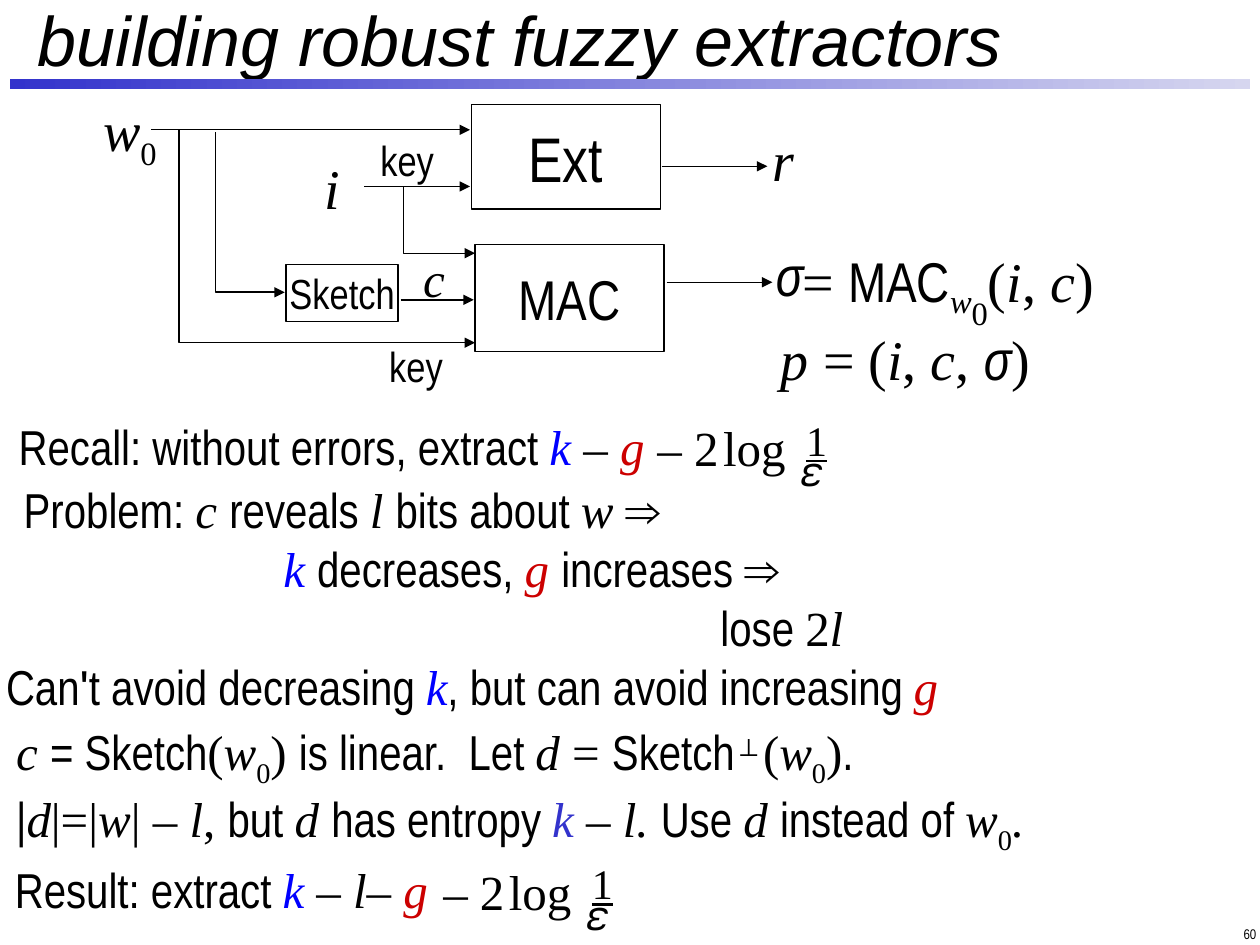
from lxml.etree import SubElement
from pptx import Presentation
from pptx.dml.color import RGBColor
from pptx.enum.shapes import MSO_CONNECTOR, MSO_SHAPE
from pptx.enum.text import MSO_ANCHOR as ANCHOR, MSO_AUTO_SIZE as AUTO, PP_ALIGN as ALIGN
from pptx.oxml.ns import qn
from pptx.util import Inches, Pt

BLACK, BLUE, RED, INDIGO = "000000", "0000FF", "CC0000", "3333CC"
NARROW, SERIF = "Arial Narrow", "Times New Roman"

# style: font, italic, colour, baseline in percent
STYLES = {
    "word": (NARROW, False, BLACK, 0),
    "greek": (NARROW, True, BLACK, 0),
    "apos": ("Arial", False, BLACK, 0),
    "math": (SERIF, False, BLACK, 0),
    "var": (SERIF, True, BLACK, 0),
    "blue": (SERIF, True, BLUE, 0),
    "indigo": (SERIF, True, INDIGO, 0),
    "red": (SERIF, True, RED, 0),
    "sub": (SERIF, False, BLACK, -25),
    "sup": (SERIF, False, BLACK, 30),
    "key": (SERIF, True, BLACK, -19),
    "keysub": (SERIF, False, BLACK, -41),
}
W0 = [("var", "w"), ("sub", "0")]


def rgb(value):
    return RGBColor.from_string(value)


def add_run(p, style, text, size):
    font, italic, colour, baseline = STYLES[style]
    r = p.add_run()
    r.text = text
    r.font.name, r.font.size, r.font.italic = font, Pt(size), italic
    r.font.color.rgb = rgb(colour)
    if baseline:
        r.font._element.set("baseline", str(baseline * 1000))
    return r


def add_text(slide, x, y, w, h, size, *lines, indents=(), spacing=None, align=ALIGN.LEFT):
    """Text box with one paragraph per line; a line is a list of (style, text)."""
    tf = slide.shapes.add_textbox(Inches(x), Inches(y), Inches(w), Inches(h)).text_frame
    tf.word_wrap = True
    for n, line in enumerate(lines):
        p = tf.paragraphs[0] if n == 0 else tf.add_paragraph()
        p.alignment = align
        if spacing:
            p.line_spacing = spacing
        if indents:
            p._p.get_or_add_pPr().set("marL", str(Inches(indents[n])))
        for style, text in line:
            add_run(p, style, text, size)
    return tf


def add_block(slide, x, y, w, h, label, size):
    sp = slide.shapes.add_shape(MSO_SHAPE.RECTANGLE, Inches(x), Inches(y), Inches(w), Inches(h))
    sp.shadow.inherit = False
    sp.fill.background()
    sp.line.color.rgb = rgb(BLACK)
    sp.line.width = Pt(0.75)
    tf = sp.text_frame
    tf.word_wrap = False
    tf.vertical_anchor = ANCHOR.MIDDLE
    tf.paragraphs[0].alignment = ALIGN.CENTER
    add_run(tf.paragraphs[0], "word", label, size)


def style_arrow(sp, width):
    sp.line.color.rgb = rgb(BLACK)
    sp.line.width = Pt(width)
    SubElement(sp.line._get_or_add_ln(), qn("a:tailEnd"), type="triangle")


def add_arrow(slide, x1, x2, y):
    line = slide.shapes.add_connector(
        MSO_CONNECTOR.STRAIGHT, Inches(x1), Inches(y), Inches(x2), Inches(y))
    style_arrow(line, 0.75)
    SubElement(line._element.spPr, qn("a:effectLst"))


def add_elbow(slide, x1, y1, x2, y2, width=0.75):
    """Arrow that runs down from (x1, y1) and then right to (x2, y2)."""
    builder = slide.shapes.build_freeform(Inches(x1), Inches(y1), scale=1.0)
    builder.add_line_segments(
        [(Inches(x1), Inches(y2)), (Inches(x2), Inches(y2))], close=False)
    sp = builder.convert_to_shape()
    sp.shadow.inherit = False
    sp.fill.background()
    style_arrow(sp, width)


def add_log_term(slide, x, y):
    """– 2 log (1/𝜀)"""
    tf = add_text(slide, x, y, 1.4, 0.5, 28,
                  [("math", "– 2"), ("math", " "), ("math", "log")], spacing=0.85)
    tf.paragraphs[0].runs[1].font.size = Pt(10)
    fraction = add_text(slide, x + 0.92, y + 0.04, 0.88, 0.59, 24,
                        [("math", "1")], [("word", "𝜀 ")], spacing=0.6, align=ALIGN.CENTER)
    fraction.paragraphs[0].runs[0].font.underline = True


def add_header(slide):
    bar = slide.shapes.add_shape(
        MSO_SHAPE.RECTANGLE, Inches(0.08), Inches(0.63), Inches(9.84), Inches(0.08))
    bar.shadow.inherit = False
    bar.line.fill.background()
    bar.fill.gradient()
    bar.fill.gradient_angle = 0
    for stop, colour, position in zip(bar.fill.gradient_stops, (INDIGO, "D6D6EF"), (0, 1)):
        stop.color.rgb = rgb(colour)
        stop.position = position
    title = slide.shapes.title
    title.left, title.top = Inches(0.2), Inches(0.07)
    title.width, title.height = Inches(8.96), Inches(0.47)
    tf = title.text_frame
    tf.text = "building robust fuzzy extractors"
    tf.auto_size = AUTO.NONE
    tf.vertical_anchor = ANCHOR.MIDDLE
    p = tf.paragraphs[0]
    p.alignment = ALIGN.LEFT
    font = p.runs[0].font
    font.name, font.size, font.italic = "Arial", Pt(40), True
    font.color.rgb = rgb(BLACK)


def add_diagram(slide):
    add_block(slide, 3.74, 0.83, 1.5, 0.83, "Ext", 36)
    add_block(slide, 3.77, 1.94, 1.5, 0.85, "MAC", 32)
    add_block(slide, 2.27, 2.1, 0.89, 0.45, "Sketch", 24)
    for x1, x2, y in ((1.2, 3.73, 1.03), (2.89, 3.73, 1.48), (5.25, 6.09, 1.32),
                      (5.29, 6.13, 2.24), (3.18, 3.76, 2.38)):
        add_arrow(slide, x1, x2, y)
    add_elbow(slide, 3.2, 1.48, 3.77, 2.01)
    add_elbow(slide, 1.42, 1.03, 3.77, 2.72)
    add_elbow(slide, 1.71, 1.05, 2.26, 2.32, 1)
    add_text(slide, 0.72, 0.71, 0.8, 0.64, 32, W0)
    for x, y, size, style, text in (
            (2.48, 1.17, 32, "var", "i"), (6.03, 0.95, 32, "var", "r"),
            (3.26, 1.92, 28, "var", "c"), (6.06, 1.86, 32, "greek", "σ"),
            (2.92, 1.02, 24, "word", "key"), (2.99, 2.65, 24, "word", "key")):
        add_text(slide, x, y, 0.75, 0.6, size, [(style, text)])
    add_text(slide, 6.27, 1.91, 2.9, 0.64, 32, [
        ("math", "= "), ("word", "MAC"), ("key", "w"), ("keysub", "0"),
        ("math", "("), ("var", "i"), ("math", ", "), ("var", "c"), ("math", ")")])
    add_text(slide, 6.1, 2.53, 2.5, 0.64, 32, [
        ("var", "p "), ("math", "= ("), ("var", "i"), ("math", ", "), ("var", "c"),
        ("math", ", "), ("greek", "σ"), ("math", ")")])


def add_argument(slide):
    add_text(slide, 0.05, 3.26, 5.5, 0.57, 28, [
        ("word", "Recall: without errors, extract "), ("blue", "k "), ("math", "– "),
        ("red", "g")])
    add_log_term(slide, 5.12, 3.34)
    add_text(
        slide, 0.09, 3.76, 7.5, 1.5, 28,
        [("word", "Problem: "), ("var", "c "), ("word", "reveals "), ("var", "l "),
         ("word", "bits about "), ("var", "w "), ("word", "⇒")],
        [("blue", "k "), ("word", "decreases, "), ("red", "g "), ("word", "increases ⇒")],
        [("word", "lose "), ("math", "2"), ("var", "l")],
        indents=(0, 2.06, 5.53))
    add_text(slide, -0.05, 5.16, 10, 0.57, 28, [
        ("word", "Can"), ("apos", "'"), ("word", "t avoid decreasing "), ("blue", "k"),
        ("word", ", but can avoid increasing "), ("red", "g")])
    add_text(
        slide, 0.03, 5.68, 9, 1.04, 28,
        [("var", "c "), ("word", "= Sketch"), ("math", "("), *W0, ("math", ") "),
         ("word", "is linear.  Let "), ("var", "d "), ("math", "= "), ("word", "Sketch"),
         ("sup", "⊥"), ("math", "("), *W0, ("math", ")"), ("word", ".")],
        [("word", "|"), ("var", "d"), ("math", "|=|"), ("var", "w"), ("math", "| – "),
         ("var", "l"), ("math", ", "), ("word", "but "), ("var", "d "),
         ("word", "has entropy "), ("indigo", "k "), ("math", "– "), ("var", "l. "),
         ("word", "Use "), ("var", "d "), ("word", "instead of "), *W0, ("var", ".")])
    add_text(slide, 0.02, 6.77, 3.7, 0.57, 28, [
        ("word", "Result: extract "), ("blue", "k"), ("math", " – "), ("var", "l"),
        ("math", "– "), ("red", "g")])
    add_log_term(slide, 3.42, 6.86)


def main():
    prs = Presentation()
    prs.slide_width, prs.slide_height = Inches(10), Inches(7.5)
    slide = prs.slides.add_slide(prs.slide_layouts[5])
    add_header(slide)
    add_diagram(slide)
    add_argument(slide)
    number = add_text(slide, 9.07, 7.16, 1, 0.5, 8, [("word", "60")], align=ALIGN.RIGHT)
    number.vertical_anchor = ANCHOR.MIDDLE
    prs.save("out.pptx")


if __name__ == "__main__":
    main()
